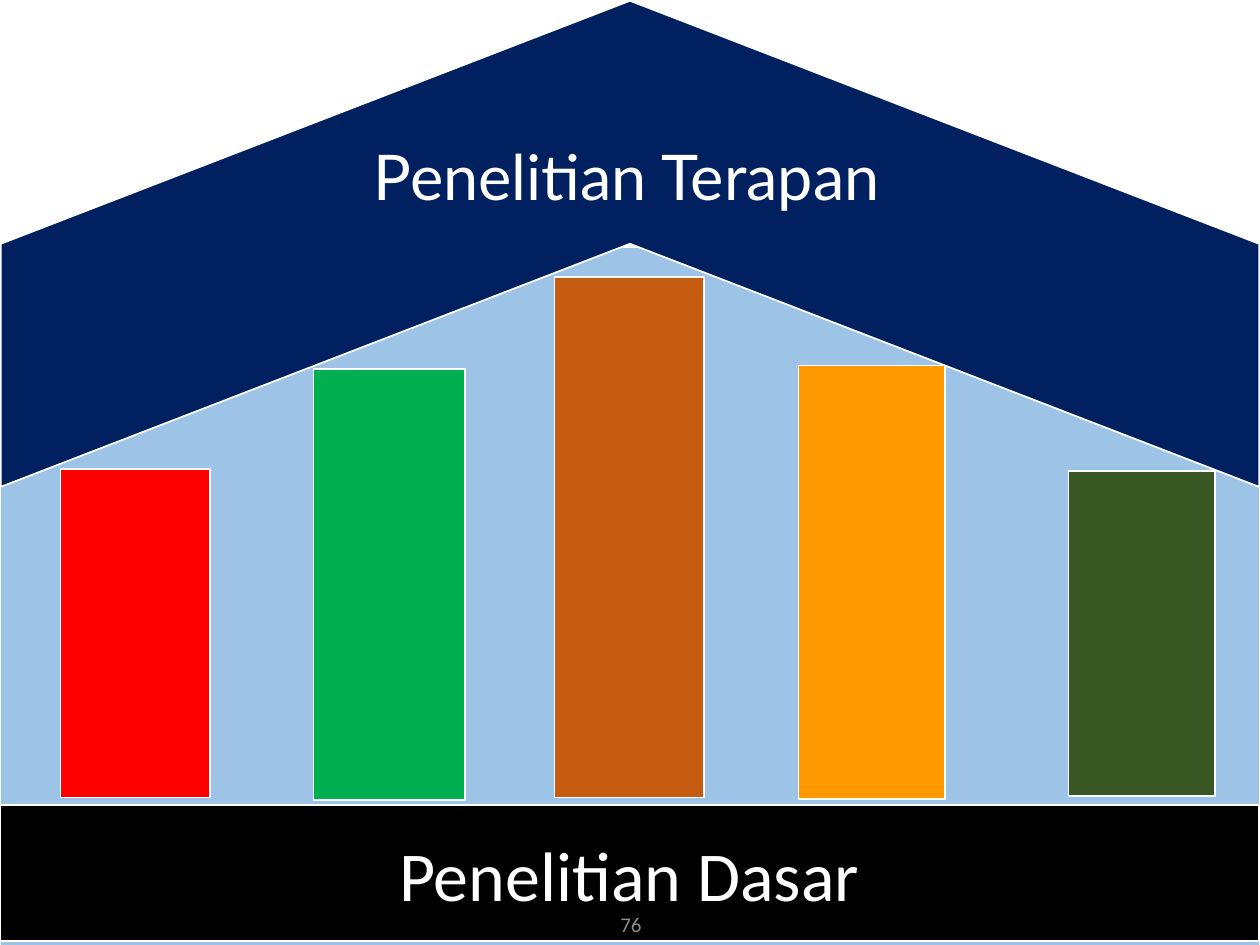
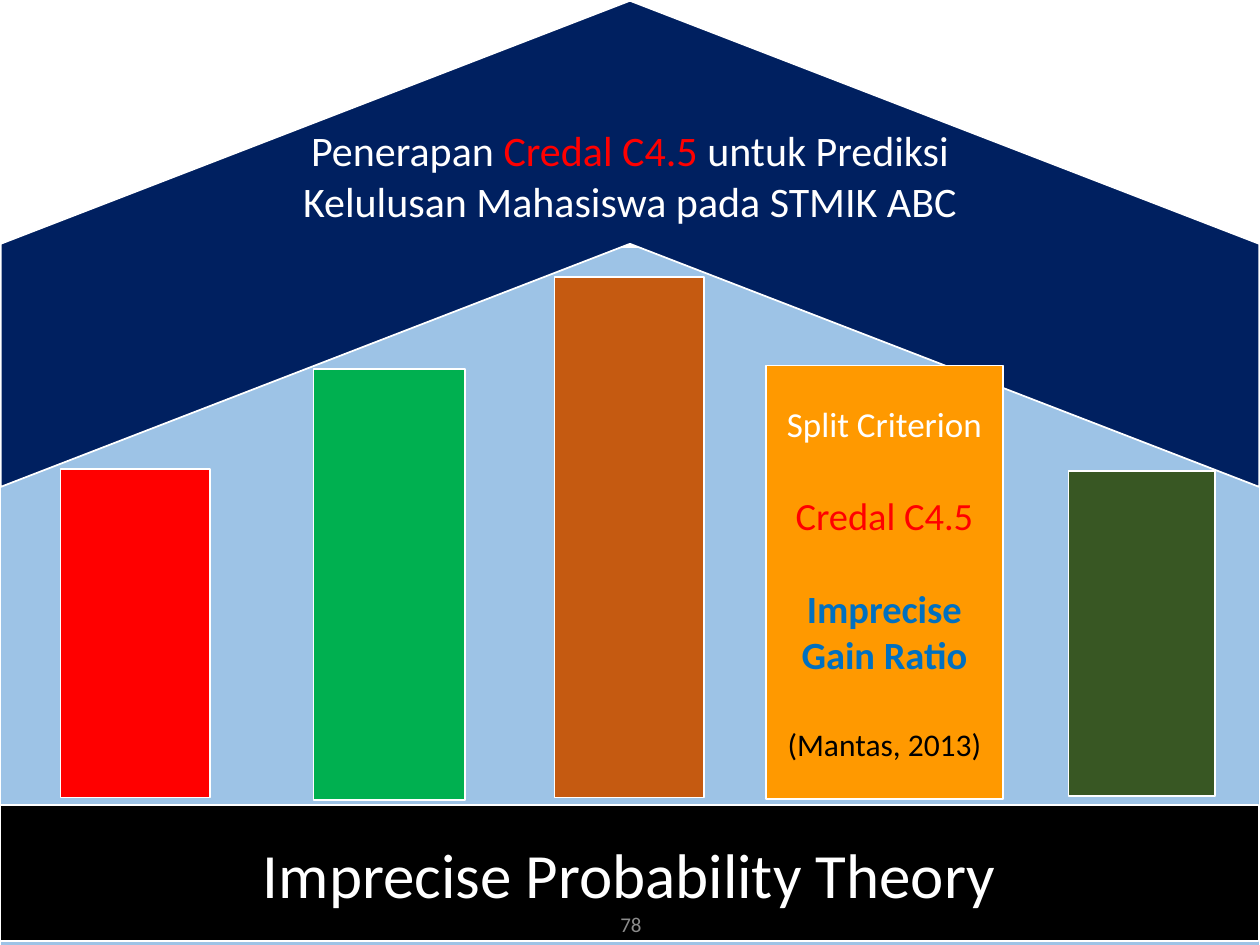
from dataclasses import dataclass, replace

import pptx
import pptx.dml.color
import pptx.enum.shapes
import pptx.enum.text
import pptx.util

Cm = pptx.util.Cm
Pt = pptx.util.Pt
Preset = pptx.enum.shapes.MSO_SHAPE
Anchor = pptx.enum.text.MSO_ANCHOR

COLOURS = {
    "white": "FFFFFF",
    "black": "000000",
    "sky": "9DC3E6",
    "navy": "002060",
    "red": "FF0000",
    "green": "00B050",
    "brown": "C55A11",
    "orange": "FF9900",
    "forest": "385723",
    "blue": "0070C0",
    "grey": "8C8C8C",
}


@dataclass(frozen=True)
class Frame:
    left: float
    top: float
    width: float
    height: float


@dataclass(frozen=True)
class Pillar:
    colour: str
    frame: Frame


@dataclass(frozen=True)
class Span:
    text: str
    colour: str = "white"


@dataclass(frozen=True)
class Line:
    text: str
    size: int
    colour: str
    bold: bool = False


@dataclass(frozen=True)
class House:
    title: list[Span]
    title_frame: Frame
    title_font: str
    title_size: int
    title_fill: str | None
    base: str
    base_size: int
    pillars: list[Pillar]
    labels: dict[str, list[Line]]
    number: str


BACKDROP = Frame(0, 4.98, 25.4, 14.17)
ROOF = Frame(7.8, -7.77, 9.8, 25.37)
BASE = Frame(0, 16.23, 25.37, 2.74)
NUMBER = Frame(9.86, 18.21, 5.72, 0.84)
LABEL_GAP = 27

ORANGE = Pillar("orange", Frame(16.1, 7.37, 2.95, 8.74))
PILLARS = [
    Pillar("red", Frame(1.22, 9.45, 3.02, 6.63)),
    Pillar("green", Frame(6.32, 7.44, 3.05, 8.69)),
    Pillar("brown", Frame(11.18, 5.59, 3.02, 10.49)),
    ORANGE,
    Pillar("forest", Frame(21.54, 9.5, 2.95, 6.55)),
]
WIDE_ORANGE = replace(ORANGE, frame=replace(ORANGE.frame, left=15.44, width=4.78))

HOUSES = [
    House(
        title=[Span("Penelitian Terapan")],
        title_frame=Frame(6.35, 2.64, 12.57, 1.8),
        title_font="Lato",
        title_size=36,
        title_fill="navy",
        base="Penelitian Dasar",
        base_size=40,
        pillars=PILLARS,
        labels={},
        number="76",
    ),
    House(
        title=[
            Span("Penerapan "),
            Span("Credal C4.5 ", "red"),
            Span("untuk Prediksi Kelulusan Mahasiswa pada STMIK ABC"),
        ],
        title_frame=Frame(5.36, 2.39, 14.68, 2.31),
        title_font="Calibri",
        title_size=24,
        title_fill=None,
        base="Imprecise Probability Theory",
        base_size=36,
        pillars=[WIDE_ORANGE if pillar is ORANGE else pillar for pillar in PILLARS],
        labels={
            "orange": [
                Line("Split Criterion", 20, "white"),
                Line("Credal C4.5", 22, "red"),
                Line("Imprecise Gain Ratio", 22, "blue", True),
                Line("(Mantas, 2013)", 18, "black"),
            ]
        },
        number="78",
    ),
]


def rgb(name: str) -> pptx.dml.color.RGBColor:
    return pptx.dml.color.RGBColor.from_string(COLOURS[name])


def lengths(frame: Frame) -> list[pptx.util.Length]:
    return [Cm(value) for value in (frame.left, frame.top, frame.width, frame.height)]


def fill_with(shape, colour: str) -> None:
    shape.fill.solid()
    shape.fill.fore_color.rgb = rgb(colour)


def add_block(page, frame: Frame, colour: str, preset=Preset.RECTANGLE):
    block = page.shapes.add_shape(preset, *lengths(frame))
    block.shadow.inherit = False
    fill_with(block, colour)
    block.line.color.rgb = rgb("white")
    block.line.width = Pt(1)
    return block


def prepare_text(shape, anchor=Anchor.MIDDLE) -> None:
    text_frame = shape.text_frame
    text_frame.word_wrap = True
    text_frame.auto_size = pptx.enum.text.MSO_AUTO_SIZE.NONE
    text_frame.vertical_anchor = anchor


def add_span(para, text: str, *, size: int, colour: str = "white",
             font: str = "Calibri", bold: bool = False) -> None:
    para.alignment = pptx.enum.text.PP_ALIGN.CENTER
    span = para.add_run()
    span.text = text
    span.font.name = font
    span.font.size = Pt(size)
    span.font.bold = bold
    span.font.color.rgb = rgb(colour)


def place_title(page, house: House) -> None:
    title = page.shapes.title
    title.left, title.top, title.width, title.height = lengths(house.title_frame)
    title.element.getparent().append(title.element)
    if house.title_fill:
        fill_with(title, house.title_fill)
    prepare_text(title, Anchor.TOP)
    para = title.text_frame.paragraphs[0]
    for part in house.title:
        add_span(para, part.text, size=house.title_size, colour=part.colour,
                 font=house.title_font)


def add_pillar(page, pillar: Pillar, lines: list[Line]) -> None:
    block = add_block(page, pillar.frame, pillar.colour)
    prepare_text(block)
    for index, line in enumerate(lines):
        if index == 0:
            para = block.text_frame.paragraphs[0]
        else:
            para = block.text_frame.add_paragraph()
            para.space_before = Pt(LABEL_GAP)
        add_span(para, line.text, size=line.size, colour=line.colour, bold=line.bold)


def build_house(deck, house: House) -> None:
    page = deck.slides.add_slide(deck.slide_layouts.get_by_name("Title Only"))
    add_block(page, BACKDROP, "sky")
    roof = add_block(page, ROOF, "navy", Preset.CHEVRON)
    roof.rotation = 270
    place_title(page, house)
    for pillar in house.pillars:
        add_pillar(page, pillar, house.labels.get(pillar.colour, []))
    base = add_block(page, BASE, "black")
    prepare_text(base)
    add_span(base.text_frame.paragraphs[0], house.base, size=house.base_size)
    number = page.shapes.add_textbox(*lengths(NUMBER))
    prepare_text(number)
    add_span(number.text_frame.paragraphs[0], house.number, size=12, colour="grey")


def main() -> None:
    deck = pptx.Presentation()
    deck.slide_width = Cm(25.4)
    deck.slide_height = Cm(19.05)
    for house in HOUSES:
        build_house(deck, house)
    deck.save("out.pptx")


if __name__ == "__main__":
    main()
